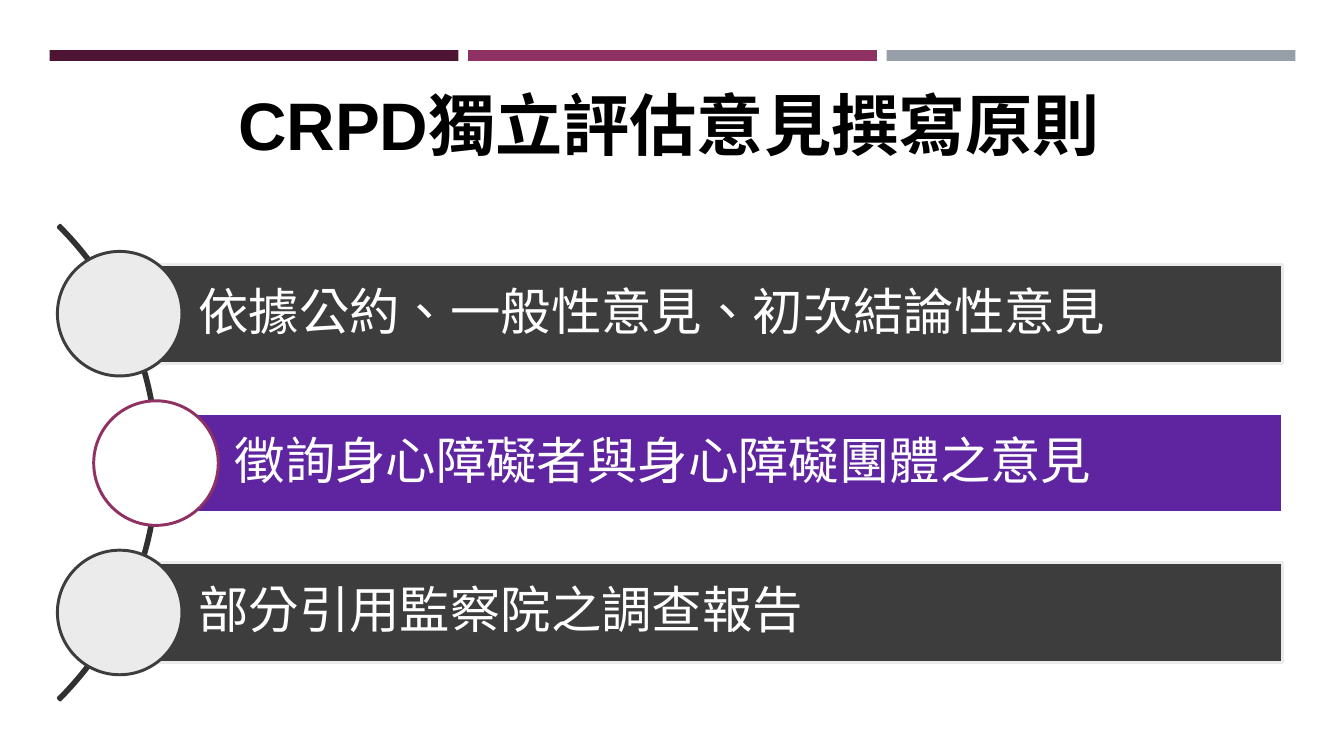
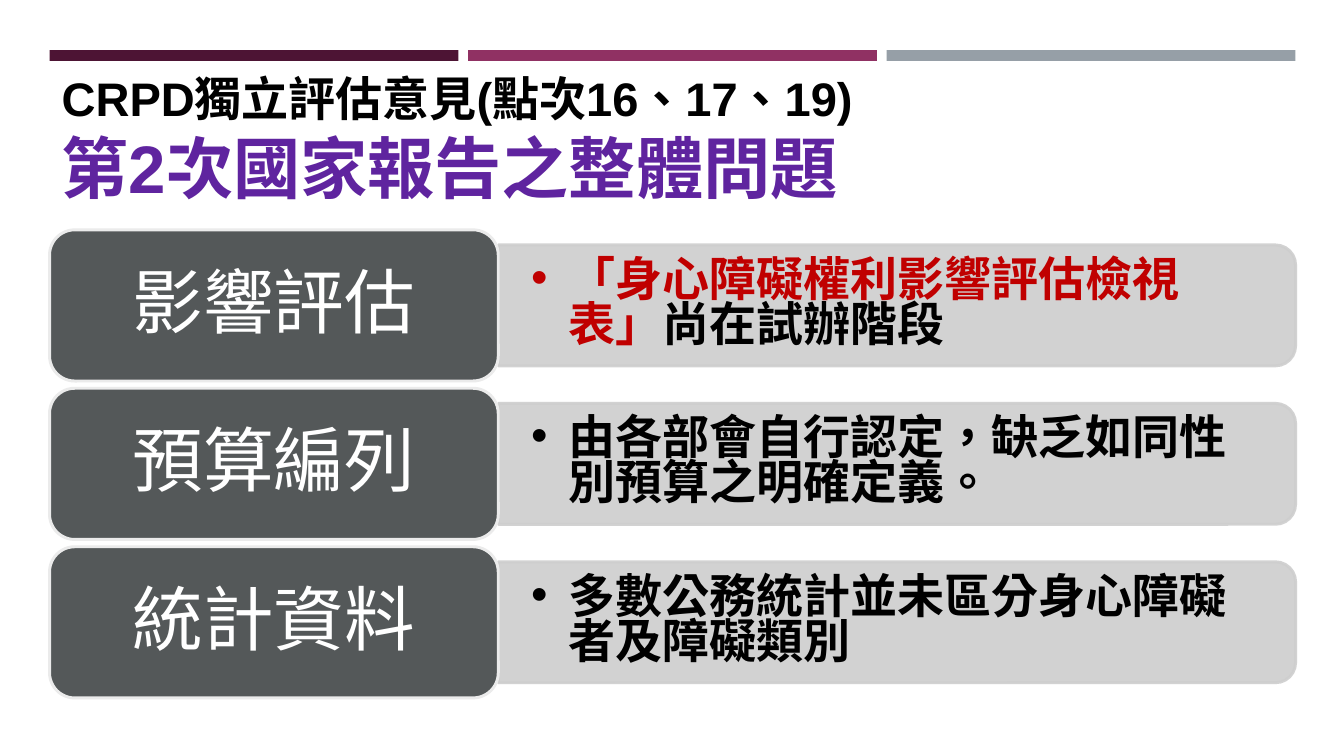
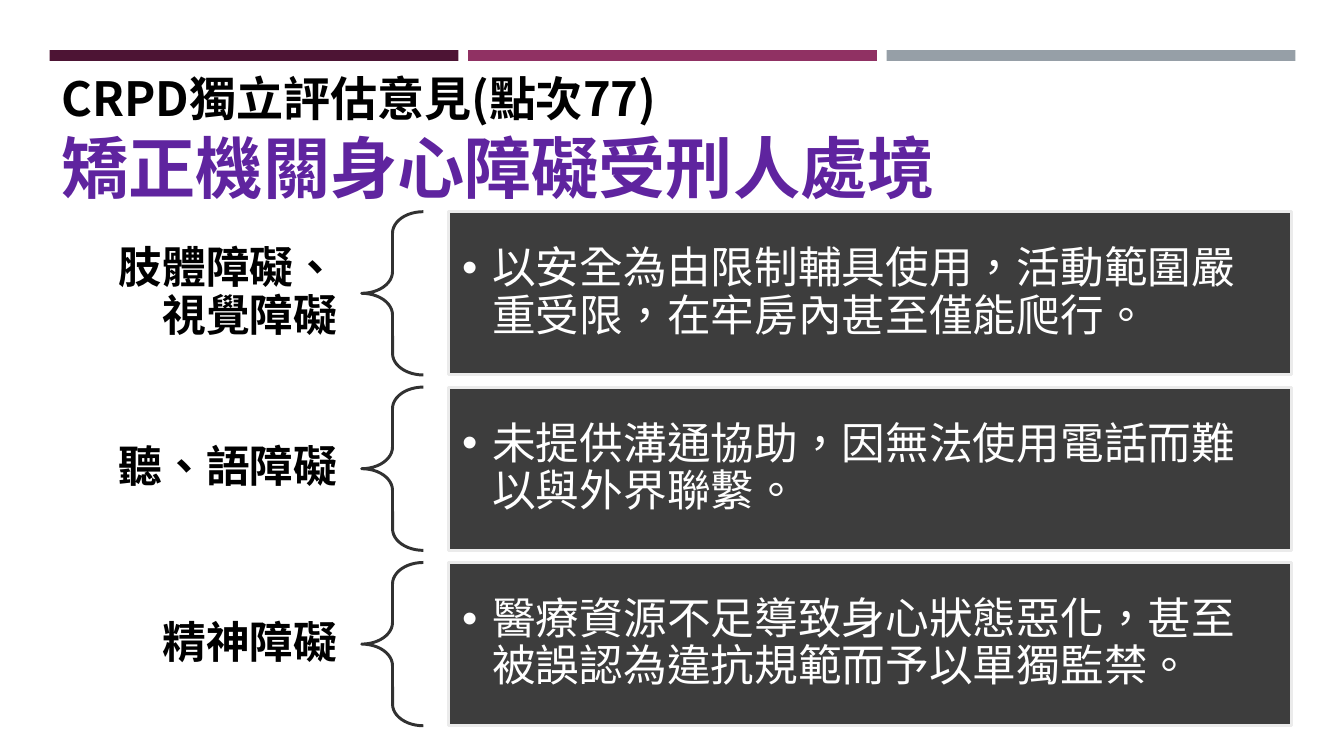
from lxml import etree
from pptx import Presentation
from pptx import util as u
from pptx.dml.color import RGBColor
from pptx.enum import lang, shapes, text
from pptx.oxml.ns import qn

PLUM = RGBColor(0x4D, 0x14, 0x34)
BERRY = RGBColor(0x90, 0x31, 0x63)
STEEL = RGBColor(0x96, 0x9F, 0xA7)
PURPLE = RGBColor(0x5F, 0x24, 0x9F)
RED = RGBColor(0xC0, 0x00, 0x00)
BLACK = RGBColor(0, 0, 0)
WHITE = RGBColor(0xFF, 0xFF, 0xFF)
INK = RGBColor(0x31, 0x31, 0x31)
CHARCOAL = RGBColor(0x3D, 0x3D, 0x3D)
SLATE = RGBColor(0x54, 0x58, 0x59)
SILVER = RGBColor(0xCE, 0xCE, 0xCE)
PALE = RGBColor(0xEB, 0xEB, 0xEB)

CJK_FONT = "Noto Sans CJK SC"
KIND = shapes.MSO_SHAPE
LEFT, CENTER, RIGHT = text.PP_ALIGN.LEFT, text.PP_ALIGN.CENTER, text.PP_ALIGN.RIGHT

prs = Presentation()
prs.slide_width, prs.slide_height = u.Inches(11.11), u.Inches(6.25)
COL, ROW = prs.slide_width / 100, prs.slide_height / 100
EDGE = 3.69  # left margin in columns


def place(slide, kind, x, y, w, h, fill=None, line=None, weight=1.75, adj=()):
    """Add a shape (a text box if kind is None) on a grid of 100 columns and rows."""
    box = [round(v) for v in (x * COL, y * ROW, w * COL, h * ROW)]
    if kind is None:
        return slide.shapes.add_textbox(*box)
    sp = slide.shapes.add_shape(kind, *box)
    sp.shadow.inherit = False
    for i, value in enumerate(adj):
        sp.adjustments[i] = value
    if fill is None:
        sp.fill.background()
    else:
        sp.fill.solid()
        sp.fill.fore_color.rgb = fill
    if line is None:
        sp.line.fill.background()
    else:
        sp.line.color.rgb = line
        sp.line.width = u.Pt(weight)
    return sp


def write(sp, *runs, size=28, font="Arial", color=BLACK, bold=False, align=LEFT,
          spacing=None, before=0, after=0, indent=0, inset=(0.1, 0.05, 0.1, 0.05)):
    """Fill a shape with one paragraph; a run is a text, or a text and its own format."""
    tf = sp.text_frame
    tf.word_wrap = True
    tf.auto_size = text.MSO_AUTO_SIZE.NONE
    tf.vertical_anchor = text.MSO_ANCHOR.MIDDLE
    tf.margin_left, tf.margin_top, tf.margin_right, tf.margin_bottom = map(u.Inches, inset)
    p = tf.paragraphs[0]
    p.alignment = align
    p.space_before, p.space_after = u.Pt(before), u.Pt(after)
    if spacing:
        p.line_spacing = spacing
    if indent:
        pPr = p._p.get_or_add_pPr()
        pPr.set("marL", str(u.Inches(indent)))
        pPr.set("indent", str(-u.Inches(indent)))
        etree.SubElement(pPr, qn("a:buFont")).set("typeface", "Arial")
        etree.SubElement(pPr, qn("a:buChar")).set("char", "•")
    for item in runs:
        words, own = (item, {}) if isinstance(item, str) else item
        if own.get("new_line"):
            p.add_line_break()
        r = p.add_run()
        r.text = words
        r.font.size = u.Pt(own.get("size", size))
        r.font.bold = bold
        r.font.color.rgb = own.get("color", color)
        r.font.name = own.get("font", font)
        r.font.language_id = lang.MSO_LANGUAGE_ID.TRADITIONAL_CHINESE
        etree.SubElement(r.font._element, qn("a:ea")).set("typeface", CJK_FONT)


# Shared layout: three bands across the top and the title's place
layout = prs.slide_layouts.get_by_name("Title Only")
principles, issues, prisons = [prs.slides.add_slide(layout) for _ in range(3)]
for i, color in enumerate((PLUM, BERRY, STEEL)):
    band = place(principles, KIND.RECTANGLE, EDGE + i * 31.14, 6.65, 30.42, 1.4, color)
    layout.shapes.element.append(band.element)

title = layout.placeholders[0]
title.left, title.top = round(EDGE * COL), round(8.3 * ROW)
title.width, title.height = round(92.6 * COL), round(20 * ROW)
HEADLINE = {"new_line": True, "size": 40, "color": PURPLE, "font": "Arial"}

# Slide 1: principles along an arc
title = principles.shapes.title
title.left, title.top = round(EDGE * COL), round(10.08 * ROW)
title.width, title.height = round(92.17 * COL), round(12.64 * ROW)
write(title, "CRPD獨立評估意見撰寫原則", size=40, bold=True, align=CENTER, before=12, after=6)

place(principles, KIND.BLOCK_ARC, -38.16, 16.8, 49.95, 88.8, line=INK, adj=(189, 27, 0.004))
BAR_RIGHT, BAR_H, DOT_W, DOT_H = 95.41, 13.12, 9.27, 16.48
for i, (words, x, fill, line, weight, dot_fill, dot_line) in enumerate((
        ("依據公約、一般性意見、初次結論性意見", 8.91, CHARCOAL, PALE, 1.75, PALE, CHARCOAL),
        ("徵詢身心障礙者與身心障礙團體之意見", 11.61, PURPLE, WHITE, 2, WHITE, BERRY),
        ("部分引用監察院之調查報告", 8.91, CHARCOAL, PALE, 1.75, PALE, CHARCOAL))):
    middle = 41.5 + i * 19.76
    bar = place(principles, KIND.RECTANGLE, x, middle - BAR_H / 2, BAR_RIGHT - x, BAR_H,
                fill, line, weight)
    write(bar, words, size=30, color=WHITE, spacing=0.9, inset=(0.65, 0.08, 0.08, 0.08))
    place(principles, KIND.OVAL, x - DOT_W / 2, middle - DOT_H / 2, DOT_W, DOT_H,
          dot_fill, dot_line)

# Slide 2: topics with a panel each
write(issues.shapes.title, "CRPD獨立評估意見(點次16、17、19)",
      ("第2次國家報告之整體問題", HEADLINE), bold=True)
LABEL_W, LABEL_H, PANEL_W = 33.39, 20, 59.32
PANEL_X = EDGE + LABEL_W
for i, (label, *runs) in enumerate((
        ("影響評估", ("「身心障礙權利影響評估檢視表」", {"color": RED}), "尚在試辦階段"),
        ("預算編列", "由各部會自行認定，缺乏如同性別預算之明確定義。"),
        ("統計資料", "多數公務統計並未區分身心障礙者及障礙類別"))):
    middle = 40.4 + i * 20.96
    # The panel stands upright before its quarter turn
    panel = place(issues, KIND.ROUND_2_SAME_RECTANGLE, PANEL_X + PANEL_W / 2 - 4.5,
                  middle - 52.72, 9, 105.44, SILVER, SILVER)
    panel.rotation = 90
    for clr in panel.element.spPr.iter(qn("a:srgbClr")):
        etree.SubElement(clr, qn("a:alpha")).set("val", "90000")
    detail = place(issues, None, PANEL_X, middle - 7.2, 58.87, 14.4)
    write(detail, *runs, font="Calibri", bold=True, spacing=0.8, indent=0.31,
          inset=(0.27, 0.14, 0.27, 0.14))
    sp = place(issues, KIND.ROUNDED_RECTANGLE, EDGE, middle - LABEL_H / 2, LABEL_W, LABEL_H,
               SLATE, PALE)
    write(sp, label, size=42, font="Calibri", color=WHITE, align=CENTER, spacing=0.9,
          inset=(0.17, 0.09, 0.17, 0.09))

# Slide 3: groups braced to their situation
write(prisons.shapes.title, ("CRPD獨立評估意見(點次77)", {"font": CJK_FONT}),
      ("矯正機關身心障礙受刑人處境", HEADLINE), bold=True)
GROUP_H = 21.6
for i, (group, situation) in enumerate((
        ("肢體障礙、視覺障礙", "以安全為由限制輔具使用，活動範圍嚴重受限，在牢房內甚至僅能爬行。"),
        ("聽、語障礙", "未提供溝通協助，因無法使用電話而難以與外界聯繫。"),
        ("精神障礙", "醫療資源不足導致身心狀態惡化，甚至被誤認為違抗規範而予以單獨監禁。"))):
    y = 28 + i * 23.2
    sp = place(prisons, None, 3.87, y, 23.04, GROUP_H)
    write(sp, group, size=26, font="Calibri", bold=True, align=RIGHT, spacing=0.9,
          inset=(0.2, 0.07, 0.2, 0.07))
    place(prisons, KIND.LEFT_BRACE, 26.91, y, 4.59, GROUP_H, line=INK, adj=(0.35, 0.5))
    sp = place(prisons, KIND.RECTANGLE, 33.39, y, 62.74, GROUP_H, CHARCOAL, PALE)
    write(sp, situation, size=26, font="Calibri", color=WHITE, spacing=0.9, indent=0.25,
          inset=(0.11, 0.11, 0.11, 0.11))

prs.save("out.pptx")
